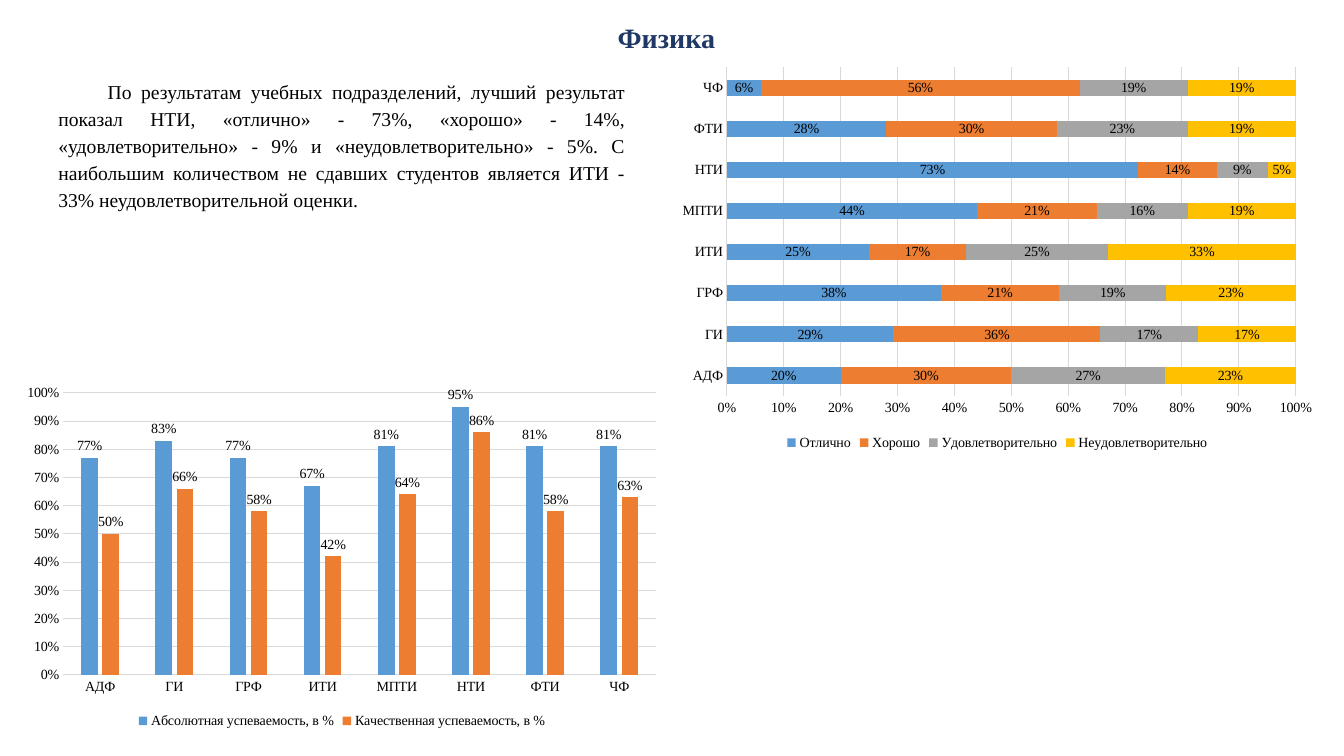
from lxml.etree import SubElement
from pptx import Presentation
from pptx.chart.data import CategoryChartData
from pptx.dml.color import RGBColor
from pptx.enum.chart import (XL_CHART_TYPE, XL_LABEL_POSITION,
                             XL_LEGEND_POSITION, XL_TICK_MARK)
from pptx.enum.text import MSO_ANCHOR, PP_ALIGN
from pptx.oxml.ns import qn
from pptx.util import Inches, Pt

FONT = "Times New Roman"
COLORS = {"text": "000000", "title": "203864", "grid": "D9D9D9", "blue": "5B9BD5",
          "orange": "ED7D31", "gray": "A5A5A5", "yellow": "FFC000"}
SERIES_COLORS = ["blue", "orange", "gray", "yellow"]

DEPARTMENTS = ["АДФ", "ГИ", "ГРФ", "ИТИ", "МПТИ", "НТИ", "ФТИ", "ЧФ"]
GRADES = {
    "Отлично": [0.2, 0.29, 0.38, 0.25, 0.44, 0.73, 0.28, 0.06],
    "Хорошо": [0.3, 0.36, 0.21, 0.17, 0.21, 0.14, 0.3, 0.56],
    "Удовлетворительно": [0.27, 0.17, 0.19, 0.25, 0.16, 0.09, 0.23, 0.19],
    "Неудовлетворительно": [0.23, 0.17, 0.23, 0.33, 0.19, 0.05, 0.19, 0.19],
}
PERFORMANCE = {
    "Абсолютная успеваемость, в %": [0.77, 0.83, 0.77, 0.67, 0.81, 0.95, 0.81, 0.81],
    "Качественная успеваемость, в %": [0.5, 0.66, 0.58, 0.42, 0.64, 0.86, 0.58, 0.63],
}
SUMMARY = ("По результатам учебных подразделений, лучший результат показал НТИ, "
           "«отлично» - 73%, «хорошо» - 14%, «удовлетворительно» - 9% и "
           "«неудовлетворительно» - 5%. С наибольшим количеством не сдавших "
           "студентов является ИТИ - 33% неудовлетворительной оценки.")


def rgb(name):
    return RGBColor.from_string(COLORS[name])


def style_font(font, size, color="text", bold=False):
    font.name, font.size, font.bold = FONT, Pt(size), bold
    font.color.rgb = rgb(color)


def style_line(line):
    line.color.rgb = rgb("grid")
    line.width = Pt(0.75)


def add_text(slide, box, text, size, color="text", bold=False):
    """Put one wrapped paragraph in the box; return its frame and paragraph."""
    frame = slide.shapes.add_textbox(*map(Inches, box)).text_frame
    frame.word_wrap = True
    paragraph = frame.paragraphs[0]
    paragraph.text = text
    style_font(paragraph.font, size, color, bold)
    return frame, paragraph


def add_heading(slide, box):
    frame, heading = add_text(slide, box, "Физика", 20, "title", True)
    frame.vertical_anchor = MSO_ANCHOR.MIDDLE
    heading.alignment = PP_ALIGN.CENTER
    heading.line_spacing = 0.9


def add_summary(slide, box):
    _, summary = add_text(slide, box, SUMMARY, 14)
    summary.alignment = PP_ALIGN.JUSTIFY
    summary.line_spacing = 1.15
    summary.space_before, summary.space_after = Pt(12), Pt(8)
    # First-line indent
    properties = summary._p.get_or_add_pPr()
    properties.set("marL", "0")
    properties.set("indent", str(Inches(0.49)))


def add_percent_chart(slide, box, kind, results, gap, overlap, label_position):
    data = CategoryChartData(number_format="0%")
    data.categories = DEPARTMENTS
    for name, shares in results.items():
        data.add_series(name, shares)
    chart = slide.shapes.add_chart(kind, *map(Inches, box), data).chart
    chart.has_title = False
    style_font(chart.font, 10)

    # Legend
    chart.has_legend = True
    chart.legend.position = XL_LEGEND_POSITION.BOTTOM
    chart.legend.include_in_layout = False
    style_font(chart.legend.font, 10)

    # Axes
    departments, shares = chart.category_axis, chart.value_axis
    for axis in (departments, shares):
        axis.major_tick_mark = axis.minor_tick_mark = XL_TICK_MARK.NONE
        style_font(axis.tick_labels.font, 10)
    style_line(departments.format.line)
    shares.format.line.fill.background()
    shares.minimum_scale, shares.maximum_scale, shares.major_unit = 0, 1, 0.1
    shares.has_major_gridlines = True
    style_line(shares.major_gridlines.format.line)
    shares.tick_labels.number_format = "0%"
    shares.tick_labels.number_format_is_linked = False

    # Bars and their labels
    plot = chart.plots[0]
    plot.gap_width, plot.overlap = gap, overlap
    plot.vary_by_categories = False
    for series, color in zip(plot.series, SERIES_COLORS):
        series.format.fill.solid()
        series.format.fill.fore_color.rgb = rgb(color)
        series.invert_if_negative = False
        labels = series.data_labels
        labels.show_value = True
        labels.number_format = "0%"
        labels.number_format_is_linked = False
        labels.position = label_position
        style_font(labels.font, 10)


def build_subject_slide(presentation):
    slide = presentation.slides.add_slide(presentation.slide_layouts[6])
    width, height = 13.33, 7.5
    margin, half = 0.14, 6.5
    middle = margin + half
    add_percent_chart(slide, (middle, 0.59, half, 3.92),
                      XL_CHART_TYPE.BAR_STACKED_100, GRADES, 150, 100,
                      XL_LABEL_POSITION.CENTER)
    add_percent_chart(slide, (margin, height / 2, half, 3.52),
                      XL_CHART_TYPE.COLUMN_CLUSTERED, PERFORMANCE, 219, -27,
                      XL_LABEL_POSITION.OUTSIDE_END)
    add_summary(slide, (0.48, 0.71, 5.82, 1.46))
    add_heading(slide, (0.86, 0.02, 11.5, 0.74))


def main():
    presentation = Presentation()
    presentation.slide_width, presentation.slide_height = Inches(13.33), Inches(7.5)
    build_subject_slide(presentation)
    presentation.save("out.pptx")


if __name__ == "__main__":
    main()
